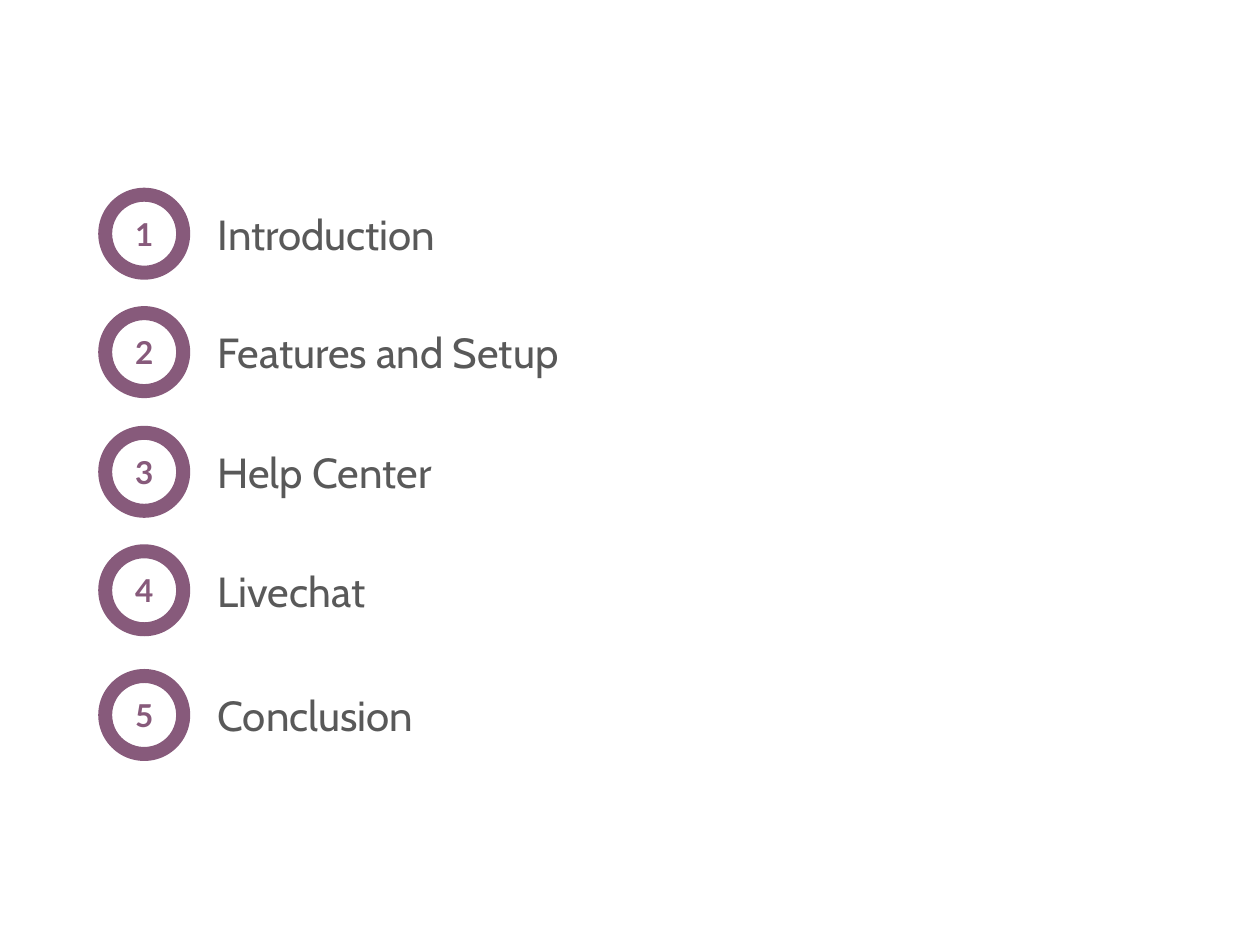
from pptx import Presentation
from pptx.dml.color import RGBColor as Rgb
from pptx.enum.shapes import MSO_SHAPE as Shape
from pptx.enum.text import MSO_ANCHOR as Anchor, PP_ALIGN as Align
from pptx.util import Inches, Pt

PLUM = "875A7B"
GRAY = "595959"
TOP, STEP = 1.49, 0.94
RING = 0.73
ITEMS = [
    ("Introduction", 0),
    ("Features and Setup", 0),
    ("Help Center", 0.01),
    ("Livechat", 0.01),
    ("Conclusion", 0.06),
]


def color(code):
    return Rgb.from_string(code)


def add_text(slide, box, text, font, size, code, pad, align=Align.LEFT, bold=False):
    frame = slide.shapes.add_textbox(*map(Inches, box)).text_frame
    frame.word_wrap = True
    frame.vertical_anchor = Anchor.MIDDLE
    frame.margin_left = frame.margin_right = Inches(0.1)
    frame.margin_top = frame.margin_bottom = Inches(pad)
    para = frame.paragraphs[0]
    para.alignment = align
    run = para.add_run()
    run.text = text
    run.font.name = font
    run.font.size = Pt(size)
    run.font.bold = bold
    run.font.color.rgb = color(code)


def add_ring(slide, left, top):
    ring = slide.shapes.add_shape(
        Shape.DONUT, Inches(left), Inches(top), Inches(RING), Inches(RING))
    ring.adjustments[0] = 0.152
    ring.shadow.inherit = False
    ring.fill.solid()
    ring.fill.fore_color.rgb = color(PLUM)
    ring.line.fill.background()


def add_item(slide, num, label, top):
    mid = top + RING / 2
    add_text(slide, (1.63, mid - 0.315, 7.54, 0.63), label, "Cabin", 24, GRAY, 0.1)
    add_text(slide, (0.8, mid - 0.21, 0.69, 0.42), str(num), "Lato", 18, PLUM,
             0.05, Align.CENTER, True)
    add_ring(slide, 0.78, top)


def main():
    deck = Presentation()
    deck.slide_width, deck.slide_height = Inches(10), Inches(7.5)
    slide = deck.slides.add_slide(deck.slide_layouts[6])
    for row, (label, shift) in enumerate(ITEMS):
        add_item(slide, row + 1, label, TOP + row * STEP + shift)
    deck.save("out.pptx")


if __name__ == "__main__":
    main()
